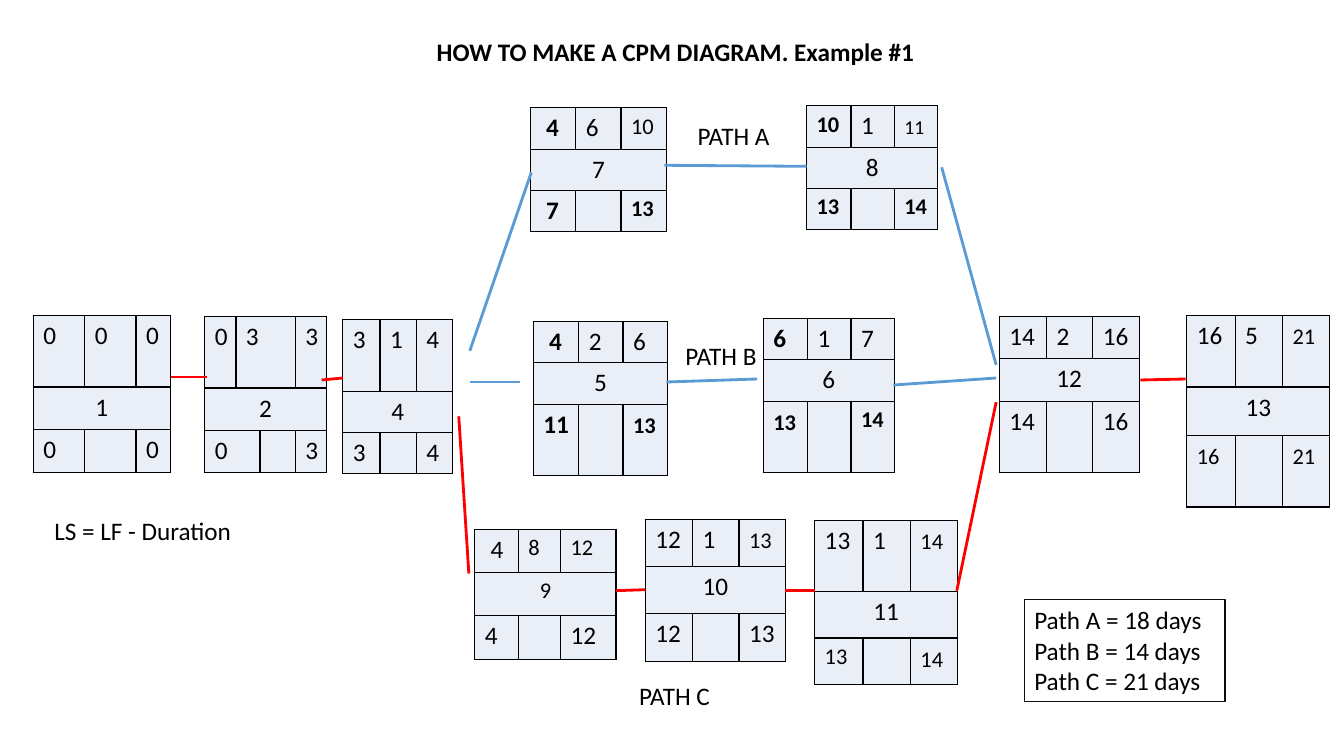
import pptx
import pptx.dml.color
import pptx.enum.shapes
import pptx.enum.text
import pptx.oxml
import pptx.util
from dataclasses import dataclass
from lxml import etree

Inches, Pt = pptx.util.Inches, pptx.util.Pt
ALIGN, ANCHOR = pptx.enum.text.PP_ALIGN, pptx.enum.text.MSO_ANCHOR
A = "http://schemas.openxmlformats.org/drawingml/2006/main"
BLACK, CELL, CRITICAL, SLACK = "000000", "EAEFF7", "FF0000", "5B9BD5"


def rgb(value):
    return pptx.dml.color.RGBColor.from_string(value)


def lengths(*values):
    return [Inches(v) for v in values]


@dataclass
class V:
    """A value in an activity node; low sets it on the baseline of 18 pt text."""
    text: str
    size: int = 18
    bold: bool = False
    low: bool = False


def write(p, text, size=18, bold=False, align=ALIGN.LEFT):
    p.alignment = align
    r = p.add_run()
    r.text = text
    for name, value in {"name": "Calibri", "size": Pt(size), "bold": bold}.items():
        setattr(r.font, name, value)
    r.font.color.rgb = rgb(BLACK)


def add_borders(cell):
    tcPr = cell._tc.get_or_add_tcPr()
    for i, side in enumerate(("lnL", "lnR", "lnT", "lnB")):
        ln = pptx.oxml.parse_xml(
            f'<a:{side} xmlns:a="{A}" w="12700"><a:solidFill>'
            f'<a:srgbClr val="{BLACK}"/></a:solidFill></a:{side}>')
        tcPr.insert(i, ln)


def add_node(s, left, top, cols, rows, early, number, late, number_size=18):
    """Activity node: early values over the activity number over late values.

    early and late map a column, or a (first, last) span, to its value.
    """
    box = lengths(left, top, sum(cols), sum(rows))
    table = s.shapes.add_table(len(rows), len(cols), *box).table
    table.first_row = table.horz_banding = False
    for col, width in zip(table.columns, cols):
        col.width = Inches(width)
    for row, height in zip(table.rows, rows):
        row.height = Inches(height)
    for cell in table.iter_cells():
        cell.fill.solid()
        cell.fill.fore_color.rgb = rgb(CELL)
        add_borders(cell)
    table.cell(1, 0).merge(table.cell(1, len(cols) - 1))
    write(table.cell(1, 0).text_frame.paragraphs[0], number, number_size,
          align=ALIGN.CENTER)
    for row, values in ((0, early), (2, late)):
        for place, v in values.items():
            first, last = place if isinstance(place, tuple) else (place, place)
            cell = table.cell(row, first)
            if last > first:
                cell.merge(table.cell(row, last))
            cell.margin_right = 0
            if v.low:
                cell.margin_top = Inches(0.05 + (18 - v.size) / 76)
            write(cell.text_frame.paragraphs[0], v.text, v.size, v.bold)


def add_link(s, color, x1, y1, x2, y2):
    c = s.shapes.add_connector(pptx.enum.shapes.MSO_CONNECTOR.STRAIGHT,
                               *lengths(x1, y1, x2, y2))
    c.line.color.rgb = rgb(color)
    c.line.width = Pt(2)
    etree.SubElement(c._element.spPr, f"{{{A}}}effectLst")


def add_label(s, box, text):
    tf = s.shapes.add_textbox(*lengths(*box)).text_frame
    tf.word_wrap = True
    write(tf.paragraphs[0], text)


def add_title(s, box, text):
    tf = s.shapes.add_textbox(*lengths(*box)).text_frame
    tf.word_wrap = True
    tf.vertical_anchor = ANCHOR.BOTTOM
    tf.paragraphs[0].line_spacing = 0.9
    write(tf.paragraphs[0], text, bold=True, align=ALIGN.CENTER)


def add_summary(s, box, lines):
    sp = s.shapes.add_shape(pptx.enum.shapes.MSO_SHAPE.RECTANGLE, *lengths(*box))
    sp.shadow.inherit = False
    sp.fill.background()
    sp.line.color.rgb = rgb("0D0D0D")
    sp.line.width = Pt(0.75)
    tf = sp.text_frame
    tf.word_wrap = True
    tf.vertical_anchor = ANCHOR.TOP
    for i, line in enumerate(lines):
        write(tf.add_paragraph() if i else tf.paragraphs[0], line)


# left, top, column widths, row heights, early values, number, late values
NODES = [
    (0.33, 3.13, (0.51, 0.51, 0.34), (0.71, 0.42, 0.43),
     {0: V("0"), 1: V("0"), 2: V("0")}, "1", {0: V("0"), 2: V("0")}),
    (2.03, 3.14, (0.31, 0.24, 0.35, 0.31), (0.71, 0.42, 0.42),
     {0: V("0"), (1, 2): V("3"), 3: V("3")}, "2", {(0, 1): V("0"), 3: V("3")}),
    (3.4, 3.17, (0.37, 0.36, 0.36), (0.71, 0.41, 0.41),
     {0: V("3"), 1: V("1"), 2: V("4")}, "4", {0: V("3"), 2: V("4")}),
    (5.29, 3.19, (0.45, 0.44, 0.44), (0.41, 0.41, 0.71),
     {0: V(" 4", bold=True), 1: V("2"), 2: V("6")}, "5",
     {0: V("11", bold=True), 2: V("13", 16, True, True)}),
    (7.57, 3.16, (0.44, 0.43, 0.43), (0.41, 0.41, 0.71),
     {0: V("6", bold=True), 1: V("1"), 2: V("7")}, "6",
     {0: V("13", 16, True, True), 2: V("14", 16, True)}),
    (9.91, 3.14, (0.47, 0.46, 0.46), (0.42, 0.42, 0.71),
     {0: V("14"), 1: V("2"), 2: V("16")}, "12", {0: V("14"), 2: V("16")}),
    (11.77, 3.13, (0.48, 0.47, 0.47), (0.71, 0.48, 0.71),
     {0: V("16"), 1: V("5"), 2: V("21", 16, low=True)}, "13",
     {0: V("16", 16, low=True), 2: V("21", 16, low=True)}),
    (5.26, 1.07, (0.45, 0.45, 0.45), (0.41, 0.41, 0.41),
     {0: V(" 4", bold=True), 1: V("6"), 2: V("10", 16)}, "7",
     {0: V(" 7", bold=True), 2: V("13", 16, True)}),
    (4.71, 5.25, (0.43, 0.42, 0.55), (0.43, 0.43, 0.43),
     {0: V(" 4"), 1: V("8", 16), 2: V("12", 16)}, "9",
     {0: V("4"), 2: V("12")}, 16),
    (8, 1.05, (0.44, 0.43, 0.43), (0.41, 0.41, 0.41),
     {0: V("10", 16, True), 1: V("1"), 2: V("11", 14, low=True)}, "8",
     {0: V("13", 16, True), 2: V("14", 16, True)}),
    (6.4, 5.15, (0.47, 0.46, 0.46), (0.47, 0.47, 0.47),
     {0: V("12"), 1: V("1"), 2: V("13", 16, low=True)}, "10",
     {0: V("12"), 2: V("13")}),
    (8.08, 5.16, (0.48, 0.47, 0.47), (0.71, 0.46, 0.46),
     {0: V("13"), 1: V("1"), 2: V("14", 16, low=True)}, "11",
     {0: V("13", 16), 2: V("14", 16, low=True)}),
]
LINKS = {
    CRITICAL: [(1.7, 3.74, 2.05, 3.74), (3.19, 3.77, 3.4, 3.75),
               (11.31, 3.77, 11.76, 3.76), (6.11, 5.86, 6.4, 5.85),
               (7.79, 5.86, 8.08, 5.86), (9.49, 5.86, 9.88, 3.99),
               (4.55, 4.13, 4.65, 5.69)],
    SLACK: [(8.86, 3.82, 9.88, 3.75), (4.66, 3.79, 5.16, 3.79),
            (6.61, 3.79, 7.51, 3.76), (6.59, 1.64, 8, 1.65),
            (4.66, 3.48, 5.27, 1.71), (9.34, 1.66, 9.88, 3.62)],
}


def main():
    prs = pptx.Presentation()
    prs.slide_width, prs.slide_height = lengths(13.33, 7.5)
    s = prs.slides.add_slide(prs.slide_layouts[6])
    add_title(s, (1.7, 0.37, 10, 0.34), "HOW TO MAKE A CPM DIAGRAM. Example #1")
    for node in NODES:
        add_node(s, *node)
    for color, links in LINKS.items():
        for ends in links:
            add_link(s, color, *ends)
    add_label(s, (0.44, 5.06, 2.32, 0.4), "LS = LF - Duration")
    for name, left, top in (("C", 6.24, 6.7), ("B", 6.7, 3.33), ("A", 6.82, 1.14)):
        add_label(s, (left, top, 0.97, 0.4), f"PATH {name}")
    add_summary(s, (10.16, 5.95, 1.99, 1.01),
                [f"Path {name} = {days} days"
                 for name, days in (("A", 18), ("B", 14), ("C", 21))])
    prs.save("out.pptx")


if __name__ == "__main__":
    main()
